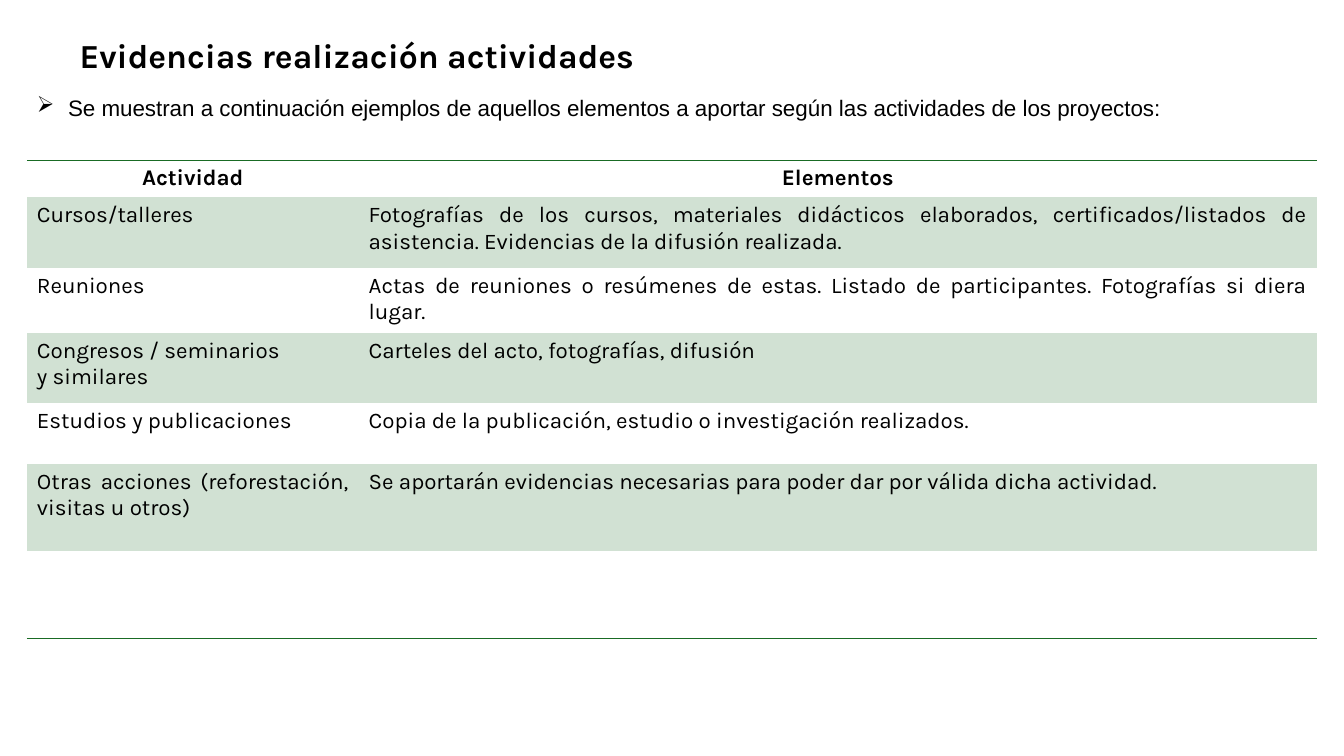
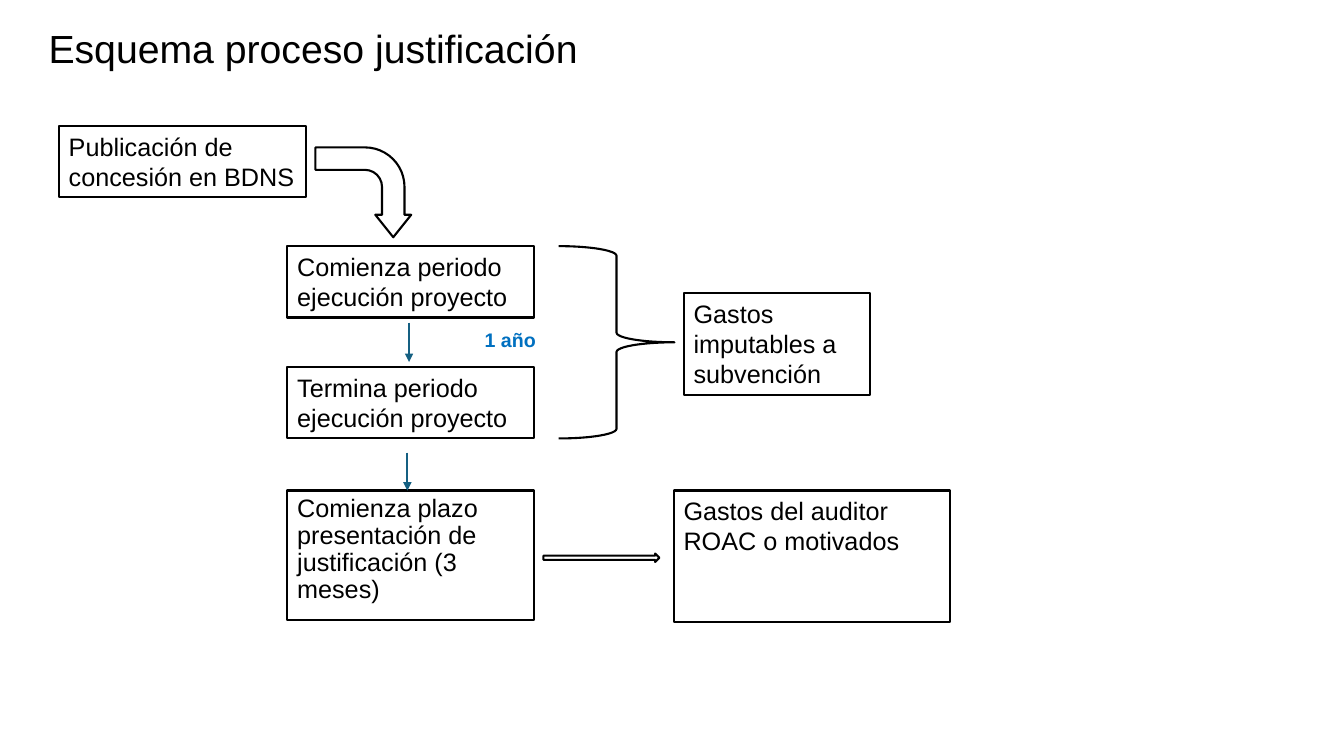
from lxml import etree
from pptx import Presentation, util as u
from pptx.dml.color import RGBColor
from pptx.enum import shapes, text
from pptx.oxml import ns

COLUMNS, ROWS = 160, 90  # grid that every length is counted in
BODY, DISPLAY = "Arial", "Karla"
BLACK, WHITE = "000000", "FFFFFF"
GREEN, PALE_GREEN, TEAL, BLUE = "196B24", "D1E1D3", "156082", "0070C0"
LEFT, CENTER, JUSTIFY = text.PP_ALIGN.LEFT, text.PP_ALIGN.CENTER, text.PP_ALIGN.JUSTIFY
SHAPE = shapes.MSO_SHAPE


def color(value):
    return RGBColor.from_string(value)


def add_xml(parent, tag, **attributes):
    return etree.SubElement(parent, ns.qn(tag), **attributes)


class Deck:
    """Holds the shared style and the slide being built."""

    def __init__(self):
        self.presentation = Presentation()
        self.presentation.slide_width = u.Inches(13.33)
        self.presentation.slide_height = u.Inches(7.5)
        self.slide = None

    def new_slide(self):
        self.slide = self.presentation.slides.add_slide(self.presentation.slide_layouts[6])

    def x(self, columns):
        return round(self.presentation.slide_width * columns / COLUMNS)

    def y(self, rows):
        return round(self.presentation.slide_height * rows / ROWS)

    def frame(self, left, top, width, height):
        return self.x(left), self.y(top), self.x(width), self.y(height)

    def set_text(self, text_frame, words, size, font=BODY, ink=BLACK, bold=False,
                 align=LEFT, spacing=None, bullet=None):
        text_frame.word_wrap = True
        text_frame.text = words
        for paragraph in text_frame.paragraphs:
            paragraph.alignment = align
            if spacing:
                paragraph.line_spacing = spacing
            if bullet:
                indent = u.Inches(0.31)
                properties = paragraph._p.get_or_add_pPr()
                properties.set("marL", str(indent))
                properties.set("indent", str(-indent))
                add_xml(properties, "a:buChar", char=bullet)
            paragraph.font.name = font
            paragraph.font.size = u.Pt(size)
            paragraph.font.bold = bold
            paragraph.font.color.rgb = color(ink)

    def label(self, place, words, size, anchor=text.MSO_ANCHOR.TOP, **style):
        text_frame = self.slide.shapes.add_textbox(*self.frame(*place)).text_frame
        text_frame.vertical_anchor = anchor
        self.set_text(text_frame, words, size, **style)

    def outline(self, kind, place, fill=WHITE, rotation=0, adjustments=()):
        shape = self.slide.shapes.add_shape(kind, *self.frame(*place))
        shape.shadow.inherit = False
        shape.rotation = rotation
        for index, value in enumerate(adjustments):
            shape.adjustments[index] = value
        if fill:
            shape.fill.solid()
            shape.fill.fore_color.rgb = color(fill)
        else:
            shape.fill.background()
        shape.line.color.rgb = color(BLACK)
        shape.line.width = u.Pt(1.5)
        return shape

    def box(self, place, words, spacing=None):
        text_frame = self.outline(SHAPE.RECTANGLE, place).text_frame
        text_frame.vertical_anchor = text.MSO_ANCHOR.TOP
        self.set_text(text_frame, words, 18, spacing=spacing)

    def down_arrow(self, column, top, bottom):
        connector = self.slide.shapes.add_connector(
            shapes.MSO_CONNECTOR.STRAIGHT,
            self.x(column), self.y(top), self.x(column), self.y(bottom))
        connector.line.color.rgb = color(TEAL)
        connector.line.width = u.Pt(1.5)
        add_xml(connector.line._get_or_add_ln(), "a:tailEnd", type="triangle")
        add_xml(connector._element.spPr, "a:effectLst")

    def borders(self, cell, ruled_sides):
        properties = cell._tc.get_or_add_tcPr()
        for side in "LRTB":
            line = add_xml(properties, "a:ln" + side, w=str(u.Pt(1)))
            if side in ruled_sides:
                add_xml(add_xml(line, "a:solidFill"), "a:srgbClr", val=GREEN)
            else:
                add_xml(line, "a:noFill")

    def table(self, left, top, widths, heights, content):
        place = self.frame(left, top, sum(widths), sum(heights))
        table = self.slide.shapes.add_table(len(heights), len(widths), *place).table
        table.first_row = table.horz_banding = False
        for column, width in zip(table.columns, widths):
            column.width = self.x(width)
        last = len(heights) - 1
        for index, (row, height, words) in enumerate(zip(table.rows, heights, content)):
            row.height = self.y(height)
            header = index == 0
            for cell, cell_words in zip(row.cells, words):
                self.borders(cell, "TB" if header else "B" if index == last else "")
                if index % 2:
                    cell.fill.solid()
                    cell.fill.fore_color.rgb = color(PALE_GREEN)
                else:
                    cell.fill.background()
                self.set_text(cell.text_frame, cell_words, 16, font=DISPLAY, bold=header,
                              align=CENTER if header else JUSTIFY)


def evidence_slide(deck):
    deck.new_slide()
    deck.label((8.3, 3.6, 68.5, 6), "Evidencias realización actividades", 24,
               font=DISPLAY, bold=True)
    deck.label((3.2, 10.6, 148.4, 4.4),
               "Se muestran a continuación ejemplos de aquellos elementos a aportar "
               "según las actividades de los proyectos:",
               16, align=JUSTIFY, bullet="➢")
    deck.table(3.2, 19.1, (39.5, 114.1), (4.4, 8.4, 7.7, 8.4, 7.2, 10.4, 10.4), (
        ("Actividad", "Elementos"),
        ("Cursos/talleres",
         "Fotografías de los cursos, materiales didácticos elaborados, "
         "certificados/listados de asistencia. Evidencias de la difusión realizada."),
        ("Reuniones",
         "Actas de reuniones o resúmenes de estas. Listado de participantes. "
         "Fotografías si diera lugar."),
        ("Congresos / seminarios\ny similares", "Carteles del acto, fotografías, difusión"),
        ("Estudios y publicaciones",
         "Copia de la publicación, estudio o investigación realizados."),
        ("Otras acciones (reforestación, visitas u otros)",
         "Se aportarán evidencias necesarias para poder dar por válida dicha actividad."),
        ("", ""),
    ))


def process_slide(deck):
    deck.new_slide()
    deck.label((4.6, 2.9, 65.9, 6.4), "Esquema proceso justificación", 28,
               anchor=text.MSO_ANCHOR.MIDDLE, spacing=0.9)

    # Steps of the process
    step_left, step_width, step_height = 34.2, 29.4, 8.5
    start_top, end_top, report_top = 29.3, 43.7, 58.4
    deck.box((7, 15, step_width, step_height), "Publicación de concesión en BDNS")
    deck.box((step_left, start_top, step_width, step_height),
             "Comienza periodo ejecución proyecto")
    deck.box((step_left, end_top, step_width, step_height),
             "Termina periodo ejecución proyecto")
    deck.box((step_left, report_top, step_width, 15.4),
             "Comienza plazo presentación de justificación (3 meses)", spacing=0.9)

    # Links between steps
    deck.outline(SHAPE.BENT_ARROW, (37.9, 17.2, 10.7, 11.4), rotation=90,
                 adjustments=(0.25, 0.2, 0.25, 0.44))
    deck.down_arrow(48.7, 38.4, 43.1)
    deck.label((56.5, 38.4, 15.2, 4.1), "1 año", 14, ink=BLUE, bold=True)
    deck.down_arrow(48.5, 53.9, report_top)

    # Expenses
    deck.outline(SHAPE.RIGHT_BRACE,
                 (66.5, start_top, 13.8, end_top + step_height - start_top), fill=None)
    deck.box((81.4, 34.9, 22.2, 12.1), "Gastos imputables a subvención")
    deck.outline(SHAPE.RIGHT_ARROW, (64.7, 65.9, 13.8, 1))
    deck.box((80.2, report_top, 32.9, 15.7), "Gastos del auditor ROAC o motivados")


def main():
    deck = Deck()
    evidence_slide(deck)
    process_slide(deck)
    deck.presentation.save("out.pptx")


if __name__ == "__main__":
    main()
